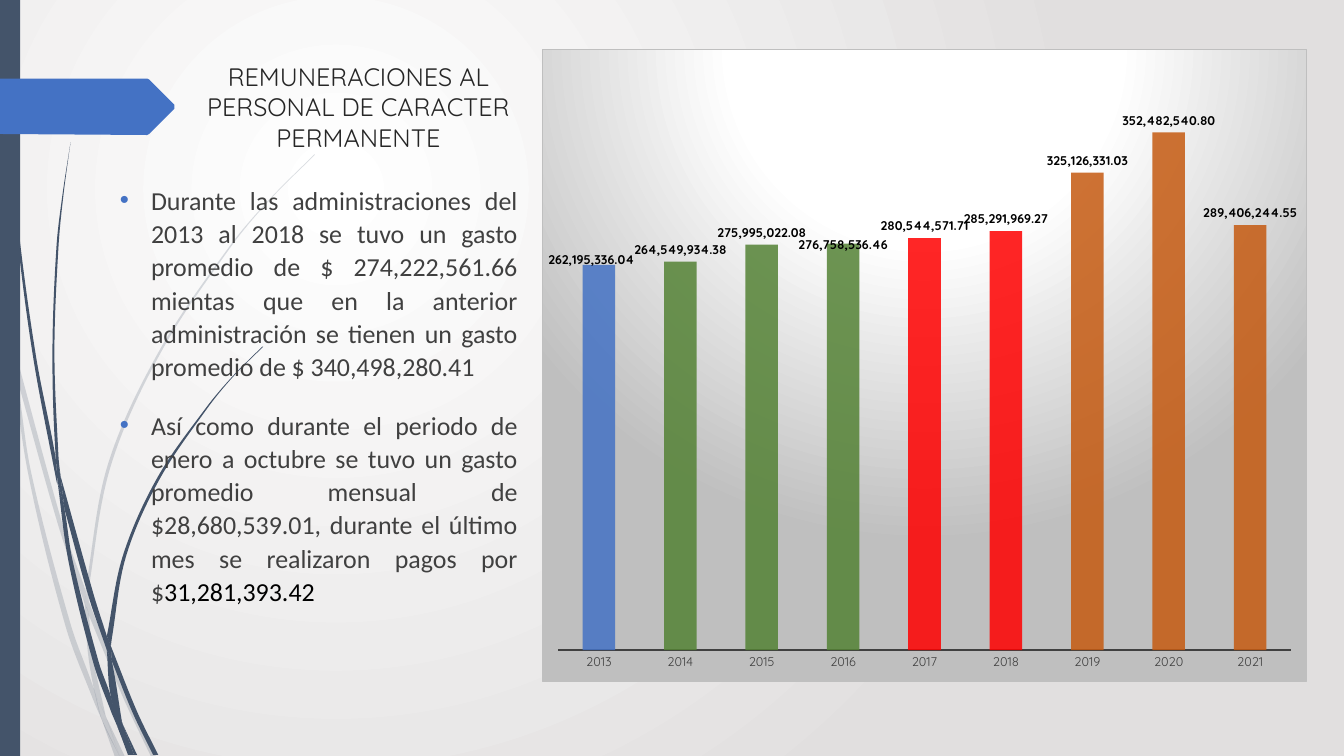
"""Builds the slide on permanent staff pay: title, two bullets and a yearly column chart."""
from math import dist
from lxml.etree import SubElement
from pptx import Presentation
from pptx.chart.data import CategoryChartData
from pptx.dml.color import RGBColor
from pptx.enum.chart import XL_CHART_TYPE as ChartType, XL_LABEL_POSITION as LabelPosition
from pptx.enum.chart import XL_TICK_MARK as TickMark
from pptx.enum.shapes import MSO_SHAPE as Preset
from pptx.enum.text import MSO_ANCHOR as Anchor, MSO_AUTO_SIZE as AutoSize, PP_ALIGN as Align
from pptx.oxml import parse_xml
from pptx.oxml.ns import nsdecls, qn
from pptx.util import Inches, Pt

COLORS = {"slate": "44546A", "blue": "4472C4", "green": "548235", "red": "FF0000",
          "orange": "C55A11", "title": "262626", "text": "404040", "black": "000000",
          "white": "FFFFFF", "mist": "E1DFDF", "silver": "BFBFBF"}
RGB = {name: RGBColor.from_string(value) for name, value in COLORS.items()}
CELL = Inches(0.1)
COLUMNS, ROWS = 133.3, 75


def style(font, face, size, color, bold=False):
    font.name, font.size, font.bold = face, Pt(size), bold
    font.color.rgb = RGB[color]


def radial(stops, left, top, right, bottom):
    marks = "".join(f'<a:gs pos="{share * 1000}"><a:srgbClr val="{COLORS[name]}"/></a:gs>'
                    for share, name in stops)
    return parse_xml(f'<a:gradFill {nsdecls("a")} rotWithShape="1"><a:gsLst>{marks}</a:gsLst>'
                     f'<a:path path="circle"><a:fillToRect l="{left}000" t="{top}000" '
                     f'r="{right}000" b="{bottom}000"/></a:path></a:gradFill>')


deck = Presentation()
deck.slide_width, deck.slide_height = int(COLUMNS * CELL), ROWS * CELL
slide = deck.slides.add_slide(deck.slide_layouts[5])
shapes = slide.shapes
slide.background.fill.solid()
backdrop = slide.element.xpath(".//p:bgPr")[0]
backdrop.replace(backdrop[0], radial([(0, "white"), (100, "mist")], 50, 50, 100, 100))

PALE_BLADES = [
    [[(0, 28.2), (.9, 32.2), (1.1, 35)], [(1, 34.4), (0, 29.9)]],
    [[(1.4, 34.5), (6.2, 52), (8.5, 58.6)], [(8.4, 59.9), (5.8, 52.2), (1.7, 37.6)]],
    [[(8.8, 59.6), (9.2, 60.7), (12.7, 69.2), (15.5, 75.1)],
     [(15, 75.1), (12.3, 69.4), (8.8, 61)]],
    [[(10.5, 71.1), (12.4, 75.1)], [(11.9, 75.1), (10.5, 71.1)]],
    [[(1.1, 35), (1.7, 37.6), (3.1, 46.9), (7, 61.9), (9.3, 68.3), (9.9, 70.7)],
     [(10.1, 71.4), (9.2, 69.3), (6.5, 62.1), (2.8, 47), (1.1, 35)]],
    [[(8.4, 59.9), (8.8, 60.8), (9.1, 64.6), (10.5, 71.1)],
     [(9.6, 69.2), (9.3, 68.3), (8.7, 64.6), (8.4, 59.9)]],
    [[(8.5, 58.4), (10.7, 46.1), (15.8, 34.8), (22.8, 24.4), (26.8, 19.7), (31.2, 15.3)],
     [(31.2, 15.4), (26.8, 19.8), (22.9, 24.5), (16, 34.9), (11, 46.2), (8.8, 58.4),
      (8.8, 59.6)]],
    [[(10.1, 71.4), (11.9, 75.1)], [(11.4, 75.1), (10.1, 71.4)]],
    [[(8.8, 60.8), (8.8, 59.6)], [(8.5, 58.6), (8.4, 59.9)]],
    [[(9.3, 68.3), (9.6, 69.2), (10.5, 71.1), (11.9, 75.1)],
     [(11.9, 75.1), (10.1, 71.4), (9.3, 68.3)]],
]
DARK_BLADES = [
    [[(.3, 0), (.4, 4.8), (.7, 11), (1.7, 23.3), (3.3, 35.5), (5.6, 47.7)],
     [(5.7, 48.1), (5.5, 45.3), (3.6, 35.5), (1.9, 23.2), (.8, 10.9), (.4, 0)]],
    [[(6, 47.2), (9.3, 59), (10.6, 63.1)], [(10.6, 64.5), (8.8, 59.2), (6.4, 50.5)]],
    [[(11, 64.1), (13.6, 70.6), (15.7, 74.9)], [(15.2, 74.9), (13.2, 70.8), (11.1, 65.6)]],
    [[(5.7, 47.7), (6.4, 50.5), (7.2, 55.6), (9.8, 65.7), (11, 69.1), (11.7, 72.2)],
     [(11.1, 70.8), (9.3, 65.9), (6.8, 55.7), (5.7, 47.7)]],
    [[(7, 14.1), (6.2, 19.3), (5.6, 24.5), (5.2, 34.9), (5.5, 44.9), (6, 47.2)],
     [(6, 47.2), (5.8, 45.3), (5.4, 34.9), (5.8, 24.5), (6.3, 19.3), (7, 14.1)]],
    [[(12.2, 71.9), (13.6, 74.9)], [(13.3, 74.9), (12.2, 71.9)]],
    [[(5.7, 47.7), (6.4, 50.5)], [(6, 47.2), (5.5, 44.9)]],
    [[(10.6, 63.1), (12.2, 55.1), (15.6, 47.4), (20.4, 40.5), (23.1, 37.3), (26, 34.4)],
     [(26.1, 34.4), (23.1, 37.4), (20.5, 40.6), (15.8, 47.6), (12.5, 55.2), (11.1, 63.3),
      (11, 64.1)]],
    [[(11.7, 72.2), (13.1, 74.9)], [(12.7, 74.9), (11.7, 72.2)]],
    [[(10.6, 64.5), (11.1, 65.6), (12.1, 71.6)], [(12.2, 71.9), (11, 69.1), (10.6, 64.5)]],
    [[(10.6, 63.1), (11, 64.1), (11.1, 65.6)], [(10.6, 64.5), (10.6, 63.1)]],
    [[(11, 69.1), (12.2, 71.9), (13.3, 74.9)], [(13, 74.9), (11.7, 72.2), (11, 69.1)]],
]
ARROW = [[(0, 7.8), (14.6, 7.8)], [(14.8, 7.9), (17.3, 10.4)],
         [(17.3, 10.8), (14.8, 13.3)], [(14.6, 13.4), (0, 13.3)]]
OUTLINES = [*((sides, "slate", 20) for sides in PALE_BLADES),
            *((sides, "slate", 100) for sides in DARK_BLADES), (ARROW, "blue", 100)]

for sides, color, opacity in OUTLINES:
    points = [sides[0][0]]
    for side in sides:
        points += [points[-1], side[0], side[0]]
        knots = [side[0], *side, side[-1]]
        for before, start, end, after in zip(knots, knots[1:], knots[2:], knots[3:]):
            span = dist(start, end)
            leave = span / (dist(before, start) + span) / 3
            arrive = span / (span + dist(end, after)) / 3
            points.append([s + (e - b) * leave for b, s, e in zip(before, start, end)])
            points.append([e - (a - s) * arrive for s, e, a in zip(start, end, after)])
            points.append(end)
    spots = [(x * CELL, y * CELL) for x, y in points[3:]]
    builder = shapes.build_freeform(*spots[0])
    builder.add_line_segments(spots[1:])
    outline = builder.convert_to_shape()
    lines = outline.element.xpath(".//a:lnTo")
    lines = lines[:len(spots) - 1]
    for first, second, third in zip(lines[::3], lines[1::3], lines[2::3]):
        first.tag = qn("a:cubicBezTo")
        for line in (second, third):
            first.append(line[0])
            line.getparent().remove(line)
    outline.shadow.inherit = False
    outline.fill.solid()
    outline.fill.fore_color.rgb = RGB[color]
    outline.line.fill.background()
    tint = outline.element.xpath("./p:spPr/a:solidFill/a:srgbClr")[0]
    SubElement(tint, qn("a:alpha"), val=str(opacity * 1000))

band = shapes.add_shape(Preset.RECTANGLE, 0, 0, 2 * CELL, ROWS * CELL)
band.shadow.inherit = False
band.fill.solid()
band.fill.fore_color.rgb = RGB["slate"]
band.line.fill.background()
band.element.addnext(outline.element)

title = shapes.title
title.left, title.top, title.width, title.height = [int(n * CELL) for n in (16.4, 4.9, 38.3, 10.7)]
title.element.getparent().append(title.element)
frame = title.text_frame
frame.text = "REMUNERACIONES AL PERSONAL DE CARACTER PERMANENTE"
frame.word_wrap, frame.auto_size, frame.vertical_anchor = True, AutoSize.NONE, Anchor.BOTTOM
frame.paragraphs[0].alignment = Align.CENTER
style(frame.paragraphs[0].runs[0].font, "Quicksand", 18, "title")

BULLETS = [
    [("Durante las administraciones del 2013 al 2018 se tuvo un gasto promedio de "
      "$ 274,222,561.66 mientas que en la anterior administración se tienen un gasto "
      "promedio de $ 340,498,280.41", "text")],
    [("Así como durante el periodo de enero a octubre se tuvo un gasto promedio mensual de "
      "$28,680,539.01, durante el último mes se realizaron pagos por $", "text"),
     ("31,281,393.42", "black")],
]
frame = shapes.add_textbox(*[int(n * CELL) for n in (10.9, 17.6, 41.4, 46.6)]).text_frame
frame.word_wrap = True
for index, pieces in enumerate(BULLETS):
    para = frame.add_paragraph() if index else frame.paragraphs[0]
    para.alignment, para.line_spacing = Align.JUSTIFY, 1.07
    para.space_before, para.space_after = Pt(10 if index else 0), Pt(8)
    settings = para._p.get_or_add_pPr()
    settings.set("marL", str(Inches(0.31)))
    settings.set("indent", str(-Inches(0.31)))
    SubElement(SubElement(settings, qn("a:buClr")), qn("a:srgbClr"), val=COLORS["blue"])
    SubElement(settings, qn("a:buFont"), typeface="Arial")
    SubElement(settings, qn("a:buChar"), char="•")
    for words, color in pieces:
        span = para.add_run()
        span.text = words
        style(span.font, "Calibri", 18.5, color)

SPENDING = [("2013", 262195336.04, "blue"), ("2014", 264549934.38, "green"),
            ("2015", 275995022.08, "green"), ("2016", 276758536.46, "green"),
            ("2017", 280544571.71, "red"), ("2018", 285291969.27, "red"),
            ("2019", 325126331.03, "orange"), ("2020", 352482540.80, "orange"),
            ("2021", 289406244.55, "orange")]
LABEL_SHIFTS = {0: (-0.01, 0.01), 3: (0, 0.02)}
years, amounts, bar_colors = zip(*SPENDING)
data = CategoryChartData(number_format="#,##0.00")
data.categories = years
data.add_series("Series 1", amounts)
chart = shapes.add_chart(ChartType.COLUMN_CLUSTERED,
                         *[int(n * CELL) for n in (53.8, 4.9, 75.8, 62.8)], data).chart
chart.has_legend = chart.has_title = False
style(chart.font, "Quicksand", 10, "black")
value_axis, year_axis = chart.value_axis, chart.category_axis
value_axis.visible = value_axis.has_major_gridlines = False
value_axis.minimum_scale, value_axis.maximum_scale = 0, 400000000
year_axis.major_tick_mark = TickMark.NONE
year_axis.format.line.color.rgb = RGB["text"]
year_axis.format.line.width = Pt(1.5)
style(year_axis.tick_labels.font, "Quicksand", 9, "text")

plot = chart.plots[0]
plot.gap_width, plot.vary_by_categories = 150, False
series = plot.series[0]
series.invert_if_negative = False
labels = series.data_labels
labels.show_value, labels.position = True, LabelPosition.OUTSIDE_END
labels.number_format, labels.number_format_is_linked = "#,##0.00", False
style(labels.font, "Quicksand", 9, "black", True)
for index, color in enumerate(bar_colors):
    fill = series.points[index].format.fill
    fill.solid()
    fill.fore_color.rgb = RGB[color]
for tint in chart.element.xpath(".//c:dPt//a:srgbClr"):
    SubElement(tint, qn("a:alpha"), val="85000")
for index, (across, down) in LABEL_SHIFTS.items():
    label = series.points[index].data_label
    style(label.font, "Quicksand", 9, "black", True)
    label.position = LabelPosition.OUTSIDE_END
    mark = chart.element.xpath(f'.//c:dLbl/c:idx[@val="{index}"]')[0]
    mark.addnext(parse_xml(f'<c:layout {nsdecls("c")}><c:manualLayout><c:x val="{across}"/>'
                           f'<c:y val="{down}"/></c:manualLayout></c:layout>'))

area = chart.element.xpath(".//c:plotArea")[0]
for old in area.findall(qn("c:layout")):
    area.remove(old)
area.insert(0, parse_xml(
    f'<c:layout {nsdecls("c")}><c:manualLayout><c:layoutTarget val="inner"/>'
    '<c:xMode val="edge"/><c:yMode val="edge"/><c:x val="0.02"/><c:y val="0.02"/>'
    '<c:w val="0.96"/><c:h val="0.93"/></c:manualLayout></c:layout>'))
panel = parse_xml(f'<c:spPr {nsdecls("c", "a")}><a:ln w="9525"><a:solidFill>'
                  f'<a:srgbClr val="{COLORS["silver"]}"/></a:solidFill></a:ln></c:spPr>')
panel.insert(0, radial([(0, "white"), (39, "white"), (100, "silver")], 50, -80, 50, 180))
chart.element.xpath("./c:chart")[0].addnext(panel)

deck.save("out.pptx")
